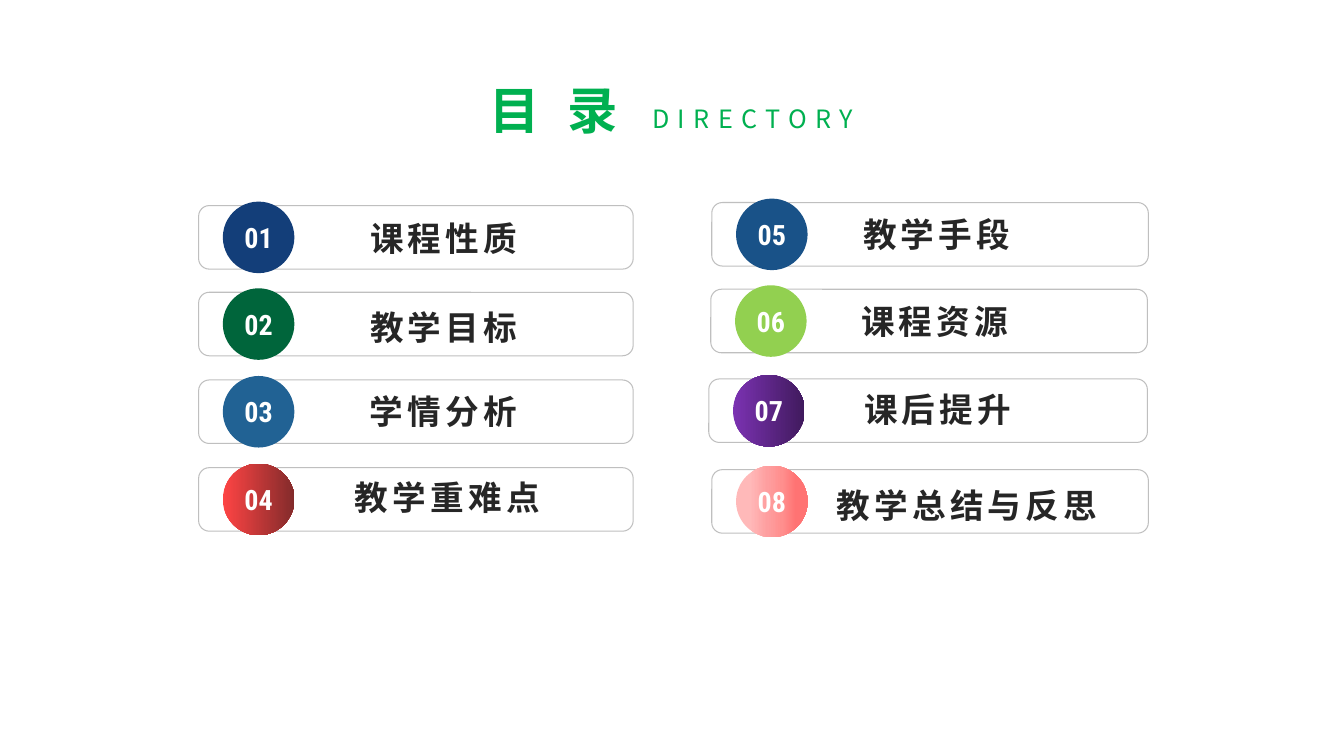
import copy

import pptx
import pptx.dml.color
import pptx.enum.shapes
import pptx.enum.text
import pptx.oxml
import pptx.oxml.ns
import pptx.util

Inches = pptx.util.Inches
RGB = pptx.dml.color.RGBColor
SHAPE = pptx.enum.shapes.MSO_SHAPE
ALIGN = pptx.enum.text.PP_ALIGN
ANCHOR = pptx.enum.text.MSO_ANCHOR
FIT = pptx.enum.text.MSO_AUTO_SIZE
qn = pptx.oxml.ns.qn

GREEN = RGB(0x00, 0xB0, 0x50)
GREY = RGB(0xBF, 0xBF, 0xBF)
INK = RGB(0x26, 0x26, 0x26)
WHITE = RGB(0xFF, 0xFF, 0xFF)
NAVY = RGB(0x13, 0x3E, 0x79)
FOREST = RGB(0x00, 0x65, 0x3B)
STEEL = RGB(0x21, 0x62, 0x94)
OCEAN = RGB(0x19, 0x52, 0x88)
LIME = RGB(0x92, 0xD0, 0x50)
REDS = [(0, RGB(0xFE, 0x44, 0x44)), (1, RGB(0x83, 0x2B, 0x2B))]
PURPLES = [(0, RGB(0x7B, 0x32, 0xB2)), (1, RGB(0x40, 0x1A, 0x5D))]
PINKS = [(0.19, RGB(0xFF, 0xB9, 0xB9)), (0.44, RGB(0xFE, 0x9E, 0x9F)),
         (0.64, RGB(0xFF, 0x8F, 0x8E)), (0.84, RGB(0xFF, 0x73, 0x73))]

# panel left, top, width; label text, left, top, width; disc fill
ITEMS = [
    (1.97, 2.04, 4.31, "课程性质", 3.67, 2.16, 2.01, NAVY),
    (1.97, 2.90, 4.31, "教学目标", 3.67, 3.04, 1.51, FOREST),
    (1.97, 3.77, 4.31, "学情分析", 3.67, 3.88, 1.66, STEEL),
    (1.97, 4.64, 4.31, "教学重难点", 3.52, 4.73, 2.57, REDS),
    (7.06, 2.01, 4.33, "教学手段", 8.56, 2.12, 2.73, OCEAN),
    (7.05, 2.87, 4.33, "课程资源", 8.54, 2.99, 2.73, LIME),
    (7.03, 3.76, 4.35, "课后提升", 8.57, 3.86, 1.96, PURPLES),
    (7.06, 4.66, 4.33, "教学总结与反思", 8.30, 4.81, 2.73, PINKS),
]


class Deck:
    sans = "Noto Sans CJK SC"
    digits = "Roboto Condensed"

    def __init__(self):
        self.prs = pptx.Presentation()
        self.prs.slide_width = Inches(13.33)
        self.prs.slide_height = Inches(7.5)
        self.slide = self.prs.slides.add_slide(self.prs.slide_layouts[5])

    def letter(self, shape, text, size, color, font, bold=False, gap=0,
               align=ALIGN.LEFT, anchor=ANCHOR.TOP):
        """Fill a shape with one styled line; gap is letter spacing in points."""
        frame = shape.text_frame
        frame.text = text
        frame.vertical_anchor = anchor
        para = frame.paragraphs[0]
        para.alignment = align
        run = para.runs[0]
        run.font.size = pptx.util.Pt(size)
        run.font.bold = bold
        run.font.color.rgb = color
        run.font.name = font
        props = run._r.get_or_add_rPr()
        if gap:
            props.set("spc", str(gap * 100))
        east = pptx.oxml.parse_xml(f'<a:ea {pptx.oxml.ns.nsdecls("a")}/>')
        east.set("typeface", font)
        props.append(east)

    def title(self, text, x, y, w, h):
        box = self.slide.shapes.title
        box.left, box.top, box.width, box.height = map(Inches, (x, y, w, h))
        self.letter(box, text, 36, GREEN, self.sans, True, 6)
        box.text_frame.word_wrap = True
        box.text_frame.auto_size = FIT.SHAPE_TO_FIT_TEXT

    def text(self, text, x, y, w, size, color, bold, gap, wrap, inset):
        box = self.slide.shapes.add_textbox(*map(Inches, (x, y, w, 0.4)))
        self.letter(box, text, size, color, self.sans, bold, gap)
        frame = box.text_frame
        frame.word_wrap = wrap
        frame.auto_size = FIT.SHAPE_TO_FIT_TEXT
        if not inset:
            frame.margin_left = frame.margin_right = 0
            frame.margin_top = frame.margin_bottom = 0

    def shape(self, kind, x, y, w, h):
        shape = self.slide.shapes.add_shape(kind, *map(Inches, (x, y, w, h)))
        shape.shadow.inherit = False
        return shape

    def panel(self, x, y, w):
        panel = self.shape(SHAPE.ROUNDED_RECTANGLE, x, y, w, 0.63)
        panel.fill.background()
        panel.line.color.rgb = GREY
        panel.line.width = pptx.util.Pt(0.75)

    def disc(self, text, x, y, paint):
        disc = self.shape(SHAPE.OVAL, x, y, 0.71, 0.71)
        disc.line.fill.background()
        if isinstance(paint, list):
            self.blend(disc, paint)
        else:
            disc.fill.solid()
            disc.fill.fore_color.rgb = paint
        self.letter(disc, text, 20, WHITE, self.digits, True,
                    align=ALIGN.CENTER, anchor=ANCHOR.MIDDLE)

    def blend(self, shape, stops):
        """Apply a left-to-right gradient with any number of stops."""
        shape.fill.gradient()
        shape.fill.gradient_angle = 0
        marks = shape._element.spPr.find(qn("a:gradFill")).find(qn("a:gsLst"))
        while len(marks) < len(stops):
            marks.append(copy.deepcopy(marks[0]))
        for mark, (place, color) in zip(shape.fill.gradient_stops, stops):
            mark.position = place
            mark.color.rgb = color


def main():
    deck = Deck()
    deck.title("目 录", 4.75, 0.73, 1.92, 0.71)
    deck.text("DIRECTORY", 6.37, 0.98, 2.23, 18, GREEN, False, 6, False, True)
    for num, (x, y, w, label, left, top, width, paint) in enumerate(ITEMS, 1):
        deck.panel(x, y, w)
        deck.disc(f"{num:02}", x + 0.24, y - 0.04, paint)
        deck.text(label, left, top, width, 24, INK, True, 3, True, False)
    deck.prs.save("out.pptx")


if __name__ == "__main__":
    main()
